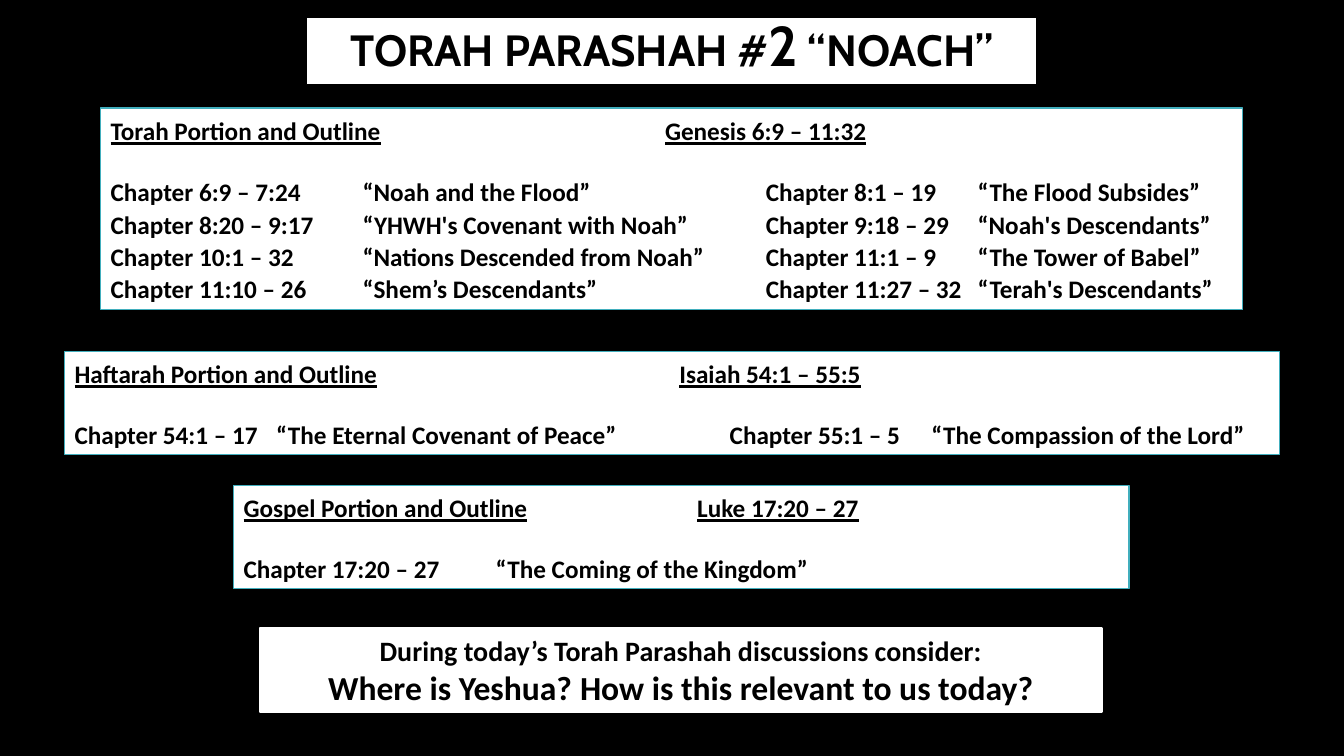
"""Build the Torah Parashah slide with its three reading outlines."""
from dataclasses import dataclass

from lxml.etree import SubElement
from pptx import Presentation
from pptx.dml.color import RGBColor
from pptx.enum.shapes import MSO_SHAPE
from pptx.enum.text import MSO_ANCHOR, PP_ALIGN
from pptx.oxml.ns import qn
from pptx.util import Cm, Pt

COLORS = {"black": "000000", "white": "FFFFFF", "teal": "41AEBD"}


@dataclass
class Box:
    left: float
    top: float
    width: float
    height: float
    line: str
    weight: float = 1


@dataclass
class Portion:
    box: Box
    head: tuple[str, str]
    stop: float
    rows: list[tuple[str, ...]]
    stops: tuple[float, ...]


@dataclass
class Part:
    text: str
    size: float
    under: bool = False


def color(name: str) -> RGBColor:
    return RGBColor.from_string(COLORS[name])


def draw_box(slide, box: Box):
    shape = slide.shapes.add_shape(
        MSO_SHAPE.RECTANGLE, Cm(box.left), Cm(box.top), Cm(box.width), Cm(box.height))
    shape.shadow.inherit = False
    shape.fill.solid()
    shape.fill.fore_color.rgb = color("white")
    shape.line.color.rgb = color(box.line)
    shape.line.width = Pt(box.weight)
    frame = shape.text_frame
    frame.word_wrap = True
    frame.vertical_anchor = MSO_ANCHOR.MIDDLE
    return frame


def add_line(frame, index: int):
    return frame.add_paragraph() if index else frame.paragraphs[0]


def fill_line(para, parts: list[Part], face: str = "Calibri") -> None:
    for part in parts:
        run = para.add_run()
        run.text = part.text
        font = run.font
        font.name, font.size, font.bold = face, Pt(part.size), True
        font.underline = part.under
        font.color.rgb = color("black")


def set_tabs(para, stops: tuple[float, ...]) -> None:
    tabs = SubElement(para._p.get_or_add_pPr(), qn("a:tabLst"))
    for stop in stops:
        SubElement(tabs, qn("a:tab"), pos=str(Cm(stop)), algn="l")


def draw_portion(slide, portion: Portion) -> None:
    frame = draw_box(slide, portion.box)
    for index, cells in enumerate([portion.head, *portion.rows]):
        para = add_line(frame, index)
        set_tabs(para, portion.stops if index else (portion.stop,))
        para.alignment = PP_ALIGN.LEFT
        para.line_spacing = 1.07
        if index == 1:
            para.space_before = Pt(20.5)
        parts = []
        for cell in cells:
            if parts:
                parts.append(Part("\t", 18))
            parts.append(Part(cell, 18, index == 0))
        fill_line(para, parts)


def draw_center(slide, box: Box, lines: list[list[Part]], face: str, space: float) -> None:
    frame = draw_box(slide, box)
    for index, parts in enumerate(lines):
        para = add_line(frame, index)
        para.alignment = PP_ALIGN.CENTER
        para.line_spacing = space
        fill_line(para, parts, face)


PORTIONS = [
    Portion(
        Box(2.54, 2.72, 28.78, 5.08, "teal"),
        ("Torah Portion and Outline", "Genesis 6:9 – 11:32"), 13.97,
        [
            ("Chapter 6:9 – 7:24", "“Noah and the Flood”",
             "Chapter 8:1 – 19", "“The Flood Subsides”"),
            ("Chapter 8:20 – 9:17", "“YHWH's Covenant with Noah”",
             "Chapter 9:18 – 29", "“Noah's Descendants”"),
            ("Chapter 10:1 – 32", "“Nations Descended from Noah”",
             "Chapter 11:1 – 9", "“The Tower of Babel”"),
            ("Chapter 11:10 – 26", "“Shem’s Descendants”",
             "Chapter 11:27 – 32", "“Terah's Descendants”"),
        ],
        (6.35, 16.51, 21.85)),
    Portion(
        Box(1.63, 8.86, 30.61, 2.59, "teal"),
        ("Haftarah Portion and Outline", "Isaiah 54:1 – 55:5"), 15.24,
        [("Chapter 54:1 – 17", "“The Eternal Covenant of Peace”",
          "Chapter 55:1 – 5", "“The Compassion of the Lord”")],
        (5.08, 16.51, 21.59)),
    Portion(
        Box(5.89, 12.24, 22.56, 2.59, "teal"),
        ("Gospel Portion and Outline", "Luke 17:20 – 27"), 11.43,
        [("Chapter 17:20 – 27", "“The Coming of the Kingdom”")],
        (6.35,)),
]


def main() -> None:
    deck = Presentation()
    deck.slide_width, deck.slide_height = Cm(33.87), Cm(19.05)
    slide = deck.slides.add_slide(deck.slide_layouts[6])
    back = slide.background.fill
    back.solid()
    back.fore_color.rgb = color("black")
    title = [Part("TORAH PARASHAH #", 31.2), Part("2", 40), Part(" “NOACH”", 31.2)]
    draw_center(slide, Box(7.72, 0.43, 18.42, 1.7, "black"), [title], "Cabin", 0.8)
    for portion in PORTIONS:
        draw_portion(slide, portion)
    closing = [
        [Part("During today’s Torah Parashah discussions consider:", 20)],
        [Part("Where is Yeshua?\tHow is this relevant to us today?", 24)],
    ]
    draw_center(slide, Box(6.55, 15.82, 21.21, 2.13, "white", 1.5), closing, "Calibri", 1.0)
    deck.save("out.pptx")


if __name__ == "__main__":
    main()
